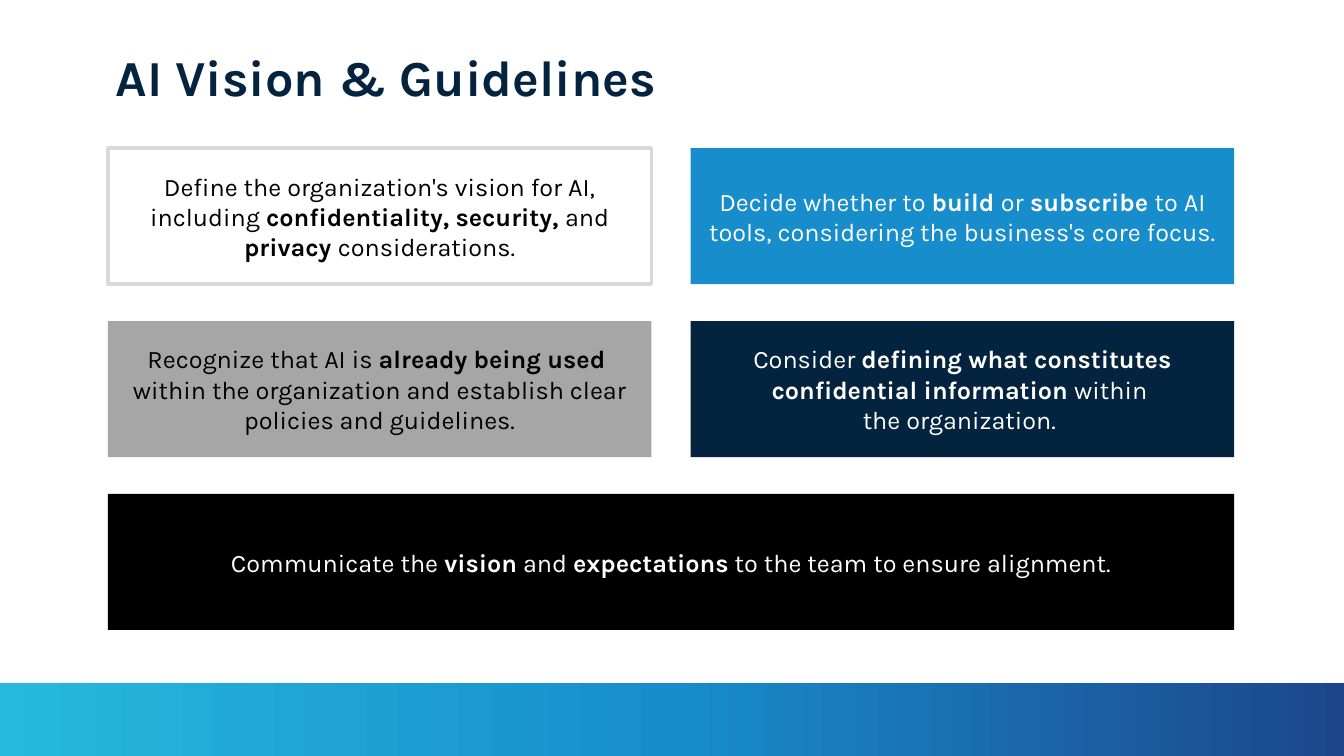
from copy import deepcopy

from pptx import Presentation
from pptx.dml.color import RGBColor
from pptx.enum import shapes, text
from pptx.util import Inches, Pt

COLORS = {
    "navy": "04233F", "blue": "188DCB", "gray": "A6A6A6", "border": "D9D9D9",
    "black": "000000", "white": "FFFFFF", "cyan": "26B9DD", "deep": "1C468C",
}
FONT = "Karla"
LEFT, TOP = 1.07, 1.47
CARD_W, CARD_H = 5.39, 1.35
STEP_X, STEP_Y = 5.78, 1.715


def rgb(name):
    return RGBColor.from_string(COLORS[name])


def add_runs(p, parts, size, color):
    """Fill a paragraph with (text, bold) runs."""
    for words, bold in parts:
        r = p.add_run()
        r.text = words
        r.font.name = FONT
        r.font.size = Pt(size)
        r.font.bold = bold
        r.font.color.rgb = rgb(color)


prs = Presentation()
prs.slide_width, prs.slide_height = Inches(13.33), Inches(7.5)
s = prs.slides.add_slide(prs.slide_layouts[6])

# Gradient footer band
band = s.shapes.add_shape(shapes.MSO_SHAPE.RECTANGLE, 0, Inches(6.78),
                          prs.slide_width, Inches(0.72))
band.shadow.inherit = False
band.line.fill.background()
band.fill.gradient()
band.fill.gradient_angle = 0
first_stop = band.fill.gradient_stops[0]._gs
first_stop.addnext(deepcopy(first_stop))
for stop, (position, color) in zip(band.fill.gradient_stops,
                                   [(0, "cyan"), (0.5, "blue"), (1, "deep")]):
    stop.position = position
    stop.color.rgb = rgb(color)

# Title
title = s.shapes.add_textbox(Inches(1.05), Inches(0.41), Inches(11.61), Inches(0.58))
tf = title.text_frame
tf.word_wrap = True
add_runs(tf.paragraphs[0], [("AI Vision & Guidelines", True)], 36, "navy")

# Cards: column, row, columns spanned, fill, text colour, paragraphs of runs
cards = [
    (0, 0, 1, "white", "black", [
        [("Define the organization's vision for AI, including ", False),
         ("confidentiality, security, ", True), ("and", False),
         (" privacy ", True), ("considerations.", False)]]),
    (1, 0, 1, "blue", "white", [
        [("Decide whether to ", False), ("build ", True), ("or", False),
         (" subscribe ", True),
         ("to AI tools, considering the business's core focus.", False)]]),
    (0, 1, 1, "gray", "black", [
        [("Recognize that AI is ", False), ("already being used ", True)],
        [("within the organization and establish clear policies and guidelines.", False)]]),
    (1, 1, 1, "navy", "white", [
        [("Consider ", False),
         ("defining what constitutes confidential information", True),
         (" within ", False)],
        [("the organization. ", False)]]),
    (0, 2, 2, "black", "white", [
        [("Communicate the ", False), ("vision", True), (" and ", False),
         ("expectations", True), (" to the team to ensure alignment.", False)]]),
]
for col, row, span, fill, color, paragraphs in cards:
    sp = s.shapes.add_shape(
        shapes.MSO_SHAPE.RECTANGLE,
        Inches(LEFT + col * STEP_X), Inches(TOP + row * STEP_Y),
        Inches(CARD_W + (span - 1) * STEP_X), Inches(CARD_H))
    sp.shadow.inherit = False
    sp.fill.solid()
    sp.fill.fore_color.rgb = rgb(fill)
    if fill == "white":
        sp.line.color.rgb = rgb("border")
        sp.line.width = Pt(2.5)
    else:
        sp.line.fill.background()
    tf = sp.text_frame
    tf.word_wrap = True
    tf.vertical_anchor = text.MSO_ANCHOR.MIDDLE
    for i, parts in enumerate(paragraphs):
        p = tf.add_paragraph() if i else tf.paragraphs[0]
        p.alignment = text.PP_ALIGN.CENTER
        add_runs(p, parts, 18, color)

prs.save("out.pptx")
